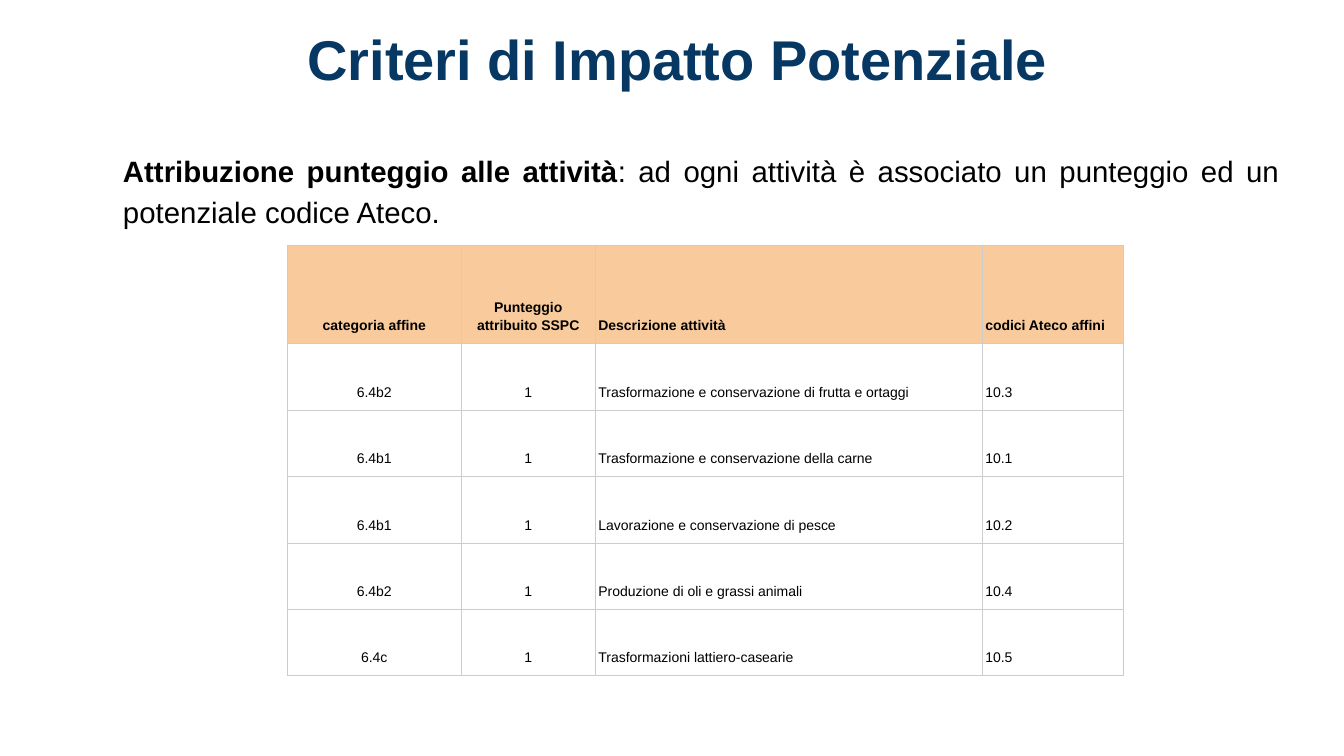
from lxml import etree
from pptx import Presentation
from pptx.dml.color import RGBColor
from pptx.enum.text import MSO_ANCHOR, PP_ALIGN
from pptx.oxml.ns import qn
from pptx.util import Cm, Pt

LEFT, CENTER, JUSTIFY = PP_ALIGN.LEFT, PP_ALIGN.CENTER, PP_ALIGN.JUSTIFY
TOP, MIDDLE, BOTTOM = MSO_ANCHOR.TOP, MSO_ANCHOR.MIDDLE, MSO_ANCHOR.BOTTOM

NAVY, BLACK, PEACH, GREY = "073763", "000000", "F9CB9C", "CCCCCC"
COL_WIDTHS = [4.38, 3.38, 9.75, 3.55]
COL_ALIGNS = [CENTER, CENTER, LEFT, LEFT]
HEADER_SHARE = 0.229
ROWS = [
    ["categoria affine", "Punteggio attribuito SSPC", "Descrizione attività", "codici Ateco affini"],
    ["6.4b2", "1", "Trasformazione e conservazione di frutta e ortaggi", "10.3"],
    ["6.4b1", "1", "Trasformazione e conservazione della carne", "10.1"],
    ["6.4b1", "1", "Lavorazione e conservazione di pesce", "10.2"],
    ["6.4b2", "1", "Produzione di oli e grassi animali", "10.4"],
    ["6.4c", "1", "Trasformazioni lattiero-casearie", "10.5"],
]


def rgb(color):
    """Turn a hex string into a colour."""
    return RGBColor.from_string(color)


def style(p, size, color, align, bold=None, spacing=None):
    """Set the font, alignment and line spacing of a paragraph."""
    p.font.name = "Arial"
    p.font.size = Pt(size)
    p.font.bold = bold
    p.font.color.rgb = rgb(color)
    p.alignment = align
    p.line_spacing = spacing


def add_text(s, x, y, w, h, anchor):
    """Add a wrapping text box and return its first paragraph."""
    tf = s.shapes.add_textbox(Cm(x), Cm(y), Cm(w), Cm(h)).text_frame
    tf.word_wrap = True
    tf.vertical_anchor = anchor
    tf.margin_left = tf.margin_right = tf.margin_top = tf.margin_bottom = Cm(0.33)
    return tf.paragraphs[0]


def add_title(s, x, y, w, h):
    """Add the centred slide title."""
    p = add_text(s, x, y, w, h, MIDDLE)
    p.text = "Criteri di Impatto Potenziale"
    style(p, 40, NAVY, CENTER, True)


def add_intro(s, x, y, w, h):
    """Add the indented sentence with its bold lead."""
    p = add_text(s, x, y, w, h, TOP)
    r = p.add_run()
    r.text = "Attribuzione punteggio alle attività"
    r.font.bold = True
    p.add_run().text = ": ad ogni attività è associato un punteggio ed un potenziale codice Ateco."
    style(p, 21, BLACK, JUSTIFY, spacing=1.15)
    p._p.get_or_add_pPr().set("marL", str(Cm(1.7)))


def add_borders(cell, color, width):
    """Draw a thin line on every side of a cell."""
    tcPr = cell._tc.get_or_add_tcPr()
    for i, side in enumerate(["a:lnL", "a:lnR", "a:lnT", "a:lnB"]):
        ln = etree.Element(qn(side), w=str(Pt(width)))
        fill = etree.SubElement(ln, qn("a:solidFill"))
        etree.SubElement(fill, qn("a:srgbClr"), val=color)
        tcPr.insert(i, ln)


def fill_cell(cell, text, align, header):
    """Write and format one table cell."""
    cell.margin_left = cell.margin_right = Cm(0.08)
    cell.margin_top = cell.margin_bottom = Cm(0.25)
    cell.vertical_anchor = BOTTOM
    if header:
        cell.fill.solid()
        cell.fill.fore_color.rgb = rgb(PEACH)
    else:
        cell.fill.background()
    add_borders(cell, GREY, 0.75)
    p = cell.text_frame.paragraphs[0]
    p.text = text
    style(p, 10, BLACK, align, header, 1.15)


def add_activities(s, x, y, w, h):
    """Add the table of activities, scores and codes."""
    table = s.shapes.add_table(len(ROWS), len(COL_WIDTHS), Cm(x), Cm(y), Cm(w), Cm(h)).table
    table.horz_banding = False
    for col, width in zip(table.columns, COL_WIDTHS):
        col.width = Cm(w * width / sum(COL_WIDTHS))
    body_height = h * (1 - HEADER_SHARE) / (len(ROWS) - 1)
    for i, texts in enumerate(ROWS):
        table.rows[i].height = Cm(body_height if i else h * HEADER_SHARE)
        for j, text in enumerate(texts):
            fill_cell(table.cell(i, j), text, COL_ALIGNS[j], i == 0)


def main():
    """Build the slide and save it."""
    prs = Presentation()
    prs.slide_width, prs.slide_height = Cm(33.87), Cm(19.05)
    s = prs.slides.add_slide(prs.slide_layouts[6])
    add_title(s, 1.07, 0.13, 32, 2.67)
    add_intro(s, 1.07, 3.4, 31.5, 3.56)
    add_activities(s, 7.24, 6.18, 21.06, 10.85)
    prs.save("out.pptx")


if __name__ == "__main__":
    main()
